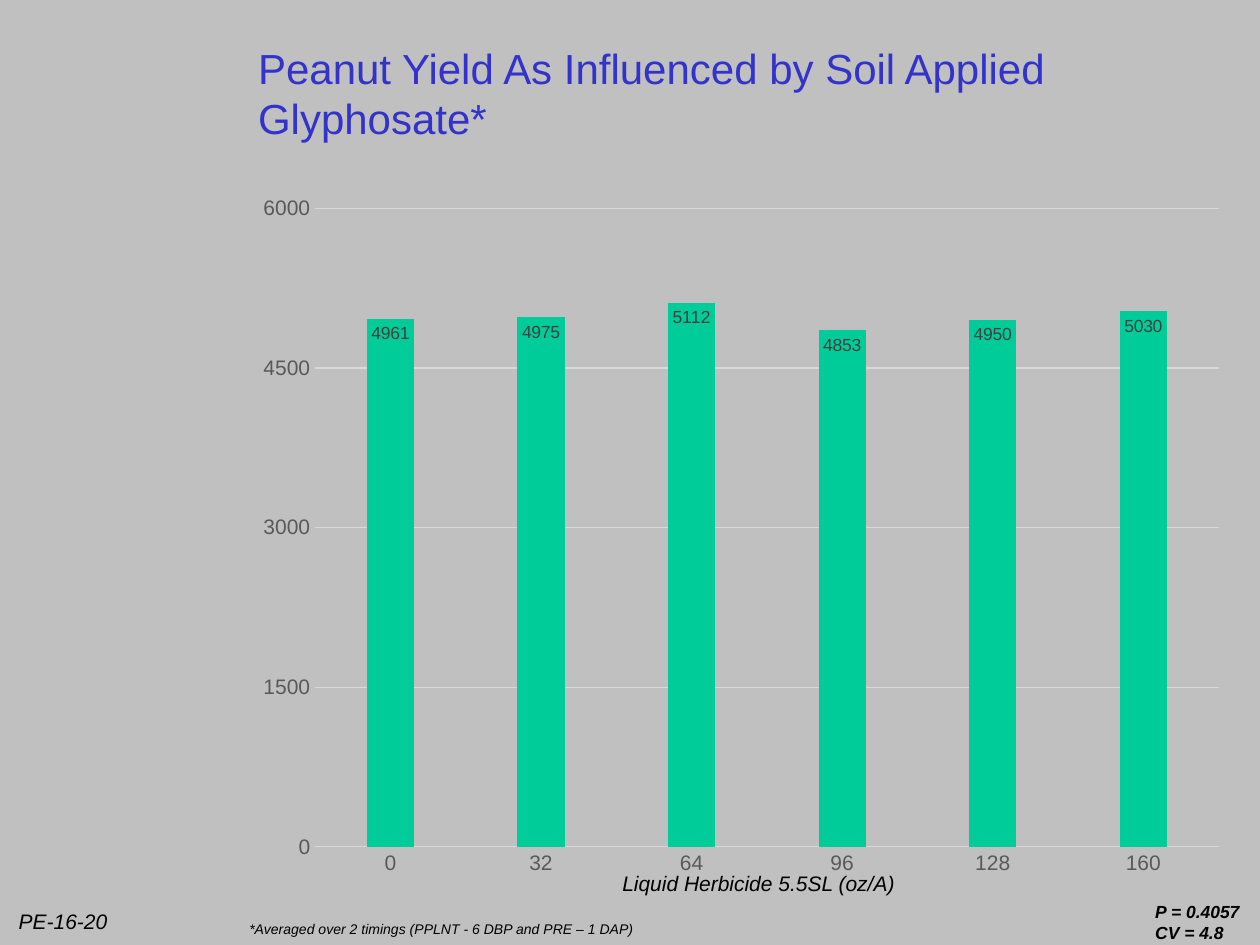
import pptx
import pptx.chart.data
import pptx.dml.color
import pptx.enum.chart
import pptx.enum.text
import pptx.util
import lxml.etree
from dataclasses import dataclass


@dataclass(frozen=True)
class Theme:
    face: str = "Arial"
    back: str = "C0C0C0"
    head: str = "3333CC"
    ink: str = "000000"
    tick: str = "595959"
    value: str = "404040"
    bar: str = "00CC99"
    rule: str = "D9D9D9"
    title: int = 24
    body: int = 12
    small: int = 10
    note: int = 8


LOOK = Theme()
SIZE = (10, 7.5)
YIELDS = {"0": 4961, "32": 4975, "64": 5112, "96": 4853, "128": 4950, "160": 5030}
TITLE = "Peanut Yield As Influenced by Soil Applied Glyphosate*"
TITLE_AT = (19.5, 1.47, 79.7, 16.67)
CHART_AT = (19.5, 19.07, 78.8, 74.27)
PLOT = {"x": 0.07, "y": 0.04, "w": 0.91, "h": 0.91}
SLANT = {"italic": True}
STRONG = {"italic": True, "bold": True}
NOTES = [
    ("PE-16-20", (0.5, 95.47, 9.1, 4), LOOK.body, SLANT),
    ("*Averaged over 2 timings (PPLNT - 6 DBP and PRE – 1 DAP)",
     (18.8, 96.8, 34.2, 3.2), LOOK.note, SLANT),
    ("P = 0.4057\nCV = 4.8", (90.7, 94.67, 8.8, 5.87), LOOK.small, STRONG),
    ("Liquid Herbicide 5.5SL (oz/A)", (48.4, 91.47, 25.8, 4), LOOK.body, SLANT),
]


def rgb(code):
    return pptx.dml.color.RGBColor.from_string(code)


def place(shares):
    return [pptx.util.Inches(share * SIZE[i % 2] / 100)
            for i, share in enumerate(shares)]


def apply(item, values):
    for name, value in values.items():
        setattr(item, name, value)


def style(font, size, color, **more):
    apply(font, {"name": LOOK.face, "size": pptx.util.Pt(size), **more})
    font.color.rgb = rgb(color)


def paint(fill, color):
    fill.solid()
    fill.fore_color.rgb = rgb(color)


def write(slide, text, at, size, color, frame, font):
    box = slide.shapes.add_textbox(*place(at)).text_frame
    box.text = text
    apply(box, frame)
    for para in box.paragraphs:
        style(para.font, size, color, **font)


def draw(slide):
    data = pptx.chart.data.CategoryChartData(number_format="0")
    data.categories = list(YIELDS)
    data.add_series("Series 1", list(YIELDS.values()))
    kind = pptx.enum.chart.XL_CHART_TYPE.COLUMN_CLUSTERED
    chart = slide.shapes.add_chart(kind, *place(CHART_AT), data).chart
    apply(chart, {"has_legend": False, "has_title": False})
    style(chart.font, LOOK.small, LOOK.ink)

    none = pptx.enum.chart.XL_TICK_MARK.NONE
    for axis in (chart.category_axis, chart.value_axis):
        apply(axis, {"major_tick_mark": none, "minor_tick_mark": none})
        style(axis.tick_labels.font, LOOK.body, LOOK.tick)
    scale = chart.value_axis
    apply(scale, {"minimum_scale": 0, "maximum_scale": 6000,
                  "major_unit": 1500, "has_major_gridlines": True})
    apply(scale.tick_labels, {"number_format": "0",
                              "number_format_is_linked": False})
    scale.format.line.fill.background()
    for line in (chart.category_axis.format.line,
                 scale.major_gridlines.format.line):
        line.width = pptx.util.Pt(0.75)
        paint(line.fill, LOOK.rule)

    plot = chart.plots[0]
    apply(plot, {"gap_width": 219, "overlap": -27, "vary_by_categories": False})
    bars = plot.series[0]
    paint(bars.format.fill, LOOK.bar)
    labels = bars.data_labels
    apply(labels, {"show_value": True,
                   "position": pptx.enum.chart.XL_LABEL_POSITION.INSIDE_END})
    style(labels.font, LOOK.small, LOOK.value)
    fit(chart)


def fit(chart):
    qn = pptx.oxml.ns.qn
    area = chart.element.find(".//" + qn("c:plotArea")) if hasattr(chart, "element") else None
    for old in area.findall(qn("c:layout")):
        area.remove(old)
    layout = lxml.etree.Element(qn("c:layout"))
    area.insert(0, layout)
    manual = lxml.etree.SubElement(layout, qn("c:manualLayout"))
    parts = {"layoutTarget": "inner", "xMode": "edge", "yMode": "edge", **PLOT}
    for name, value in parts.items():
        lxml.etree.SubElement(manual, qn("c:" + name)).set("val", str(value))


def main():
    deck = pptx.Presentation()
    apply(deck, {"slide_width": pptx.util.Inches(SIZE[0]),
                 "slide_height": pptx.util.Inches(SIZE[1])})
    slide = deck.slides.add_slide(deck.slide_layouts[6])
    paint(slide.background.fill, LOOK.back)
    middle = {"word_wrap": True,
              "vertical_anchor": pptx.enum.text.MSO_ANCHOR.MIDDLE}
    write(slide, TITLE, TITLE_AT, LOOK.title, LOOK.head, middle, {})
    draw(slide)
    grow = {"word_wrap": False,
            "auto_size": pptx.enum.text.MSO_AUTO_SIZE.SHAPE_TO_FIT_TEXT}
    for text, at, size, font in NOTES:
        write(slide, text, at, size, LOOK.ink, grow, font)
    deck.save("out.pptx")


if __name__ == "__main__":
    main()
